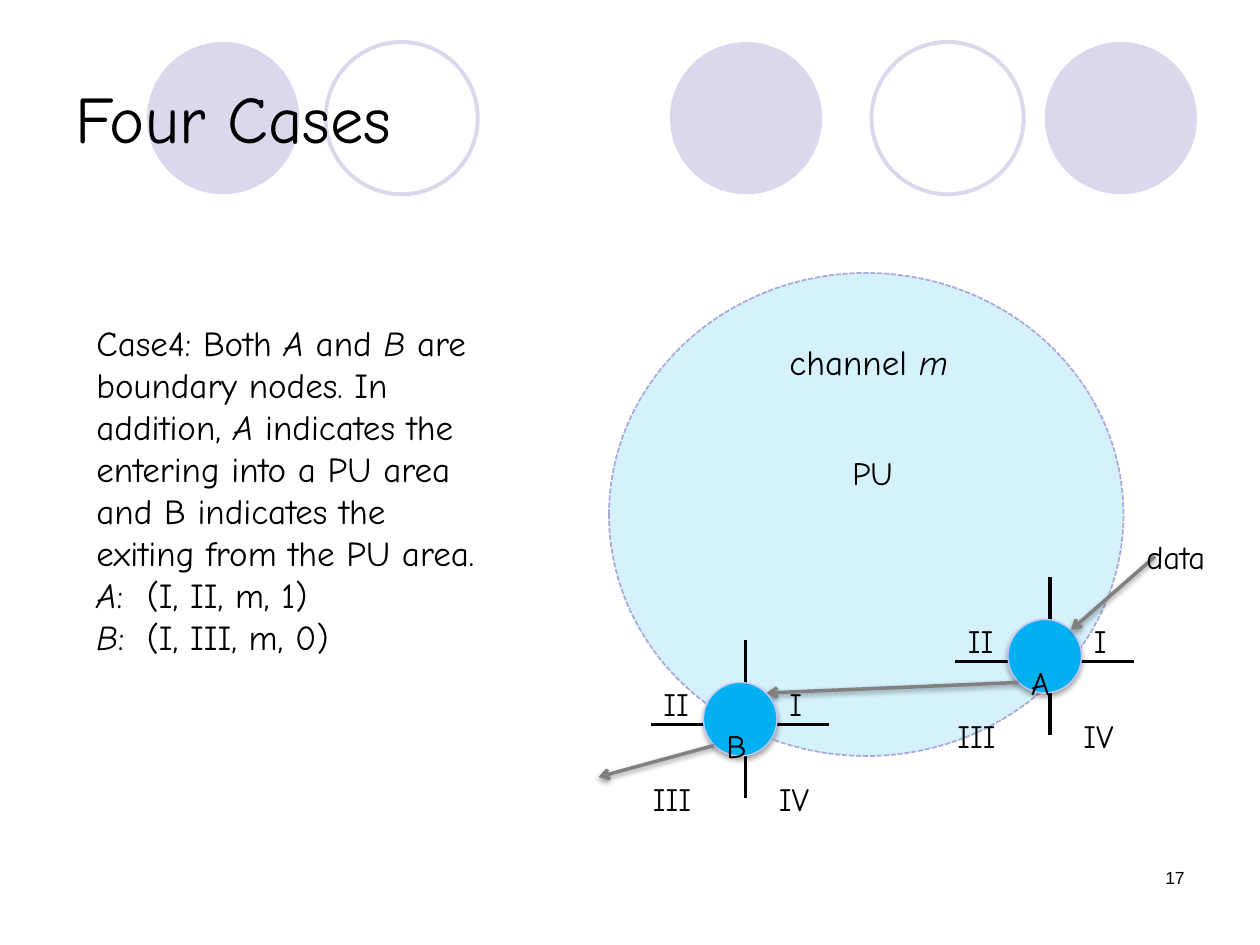
from lxml.etree import SubElement
from pptx import Presentation
from pptx.dml.color import RGBColor
from pptx.enum.dml import MSO_LINE
from pptx.enum.shapes import MSO_CONNECTOR, MSO_SHAPE
from pptx.enum.text import MSO_ANCHOR, PP_ALIGN
from pptx.oxml.ns import qn
from pptx.util import Inches, Pt

COLUMNS, ROWS = 120, 90
SLIDE_WIDTH, SLIDE_HEIGHT = Inches(10), Inches(7.5)
FONT = "Comic Neue"
LILAC, SKY, BLACK, GRAY = "D9D8EC", "00B0F0", "000000", "808080"


def color(value):
    """Turn a hex string into a colour."""
    return RGBColor.from_string(value)


def place(column, row):
    """Turn grid units into lengths on the slide."""
    return int(SLIDE_WIDTH * column / COLUMNS), int(SLIDE_HEIGHT * row / ROWS)


def add_shadow(effects, distance, opacity):
    """Put a soft downward shadow into an effect list."""
    shadow = SubElement(effects, qn("a:outerShdw"), blurRad="40000",
                        dist=str(distance), dir="5400000", rotWithShape="0")
    shade = SubElement(shadow, qn("a:srgbClr"), val=BLACK)
    SubElement(shade, qn("a:alpha"), val=str(opacity * 1000))


def add_text(slide, box, paragraphs, size=20, font=FONT, lowered=False,
             align=PP_ALIGN.LEFT, anchor=MSO_ANCHOR.TOP):
    """Add paragraphs, each a list of runs in which odd ones are italic."""
    left, top, width, height = box
    shape = slide.shapes.add_textbox(*place(left, top), *place(width, height))
    frame = shape.text_frame
    frame.word_wrap = True
    frame.vertical_anchor = anchor
    for index, pieces in enumerate(paragraphs):
        paragraph = frame.add_paragraph() if index else frame.paragraphs[0]
        paragraph.alignment = align
        paragraph.font.size = Pt(size)
        paragraph.font.name = font
        paragraph.font.color.rgb = color(BLACK)
        for position, piece in enumerate(pieces):
            if not piece:
                continue
            run = paragraph.add_run()
            run.text = piece
            if position % 2:
                run.font.italic = True
            if lowered:
                run._r.get_or_add_rPr().set("baseline", "-25000")
    return shape


def add_label(slide, box, text):
    """Add a lowered diagram label."""
    return add_text(slide, box, [[text]], size=32, lowered=True)


def add_circle(slide, box, fill=None, line=None, weight=1):
    """Add an ellipse with an optional fill and outline."""
    left, top, width, height = box
    shape = slide.shapes.add_shape(
        MSO_SHAPE.OVAL, *place(left, top), *place(width, height))
    shape.shadow.inherit = False
    if fill:
        shape.fill.solid()
        shape.fill.fore_color.rgb = color(fill)
    else:
        shape.fill.background()
    if line:
        shape.line.color.rgb = color(line)
        shape.line.width = Pt(weight)
    else:
        shape.line.fill.background()
    return shape


def add_line(slide, start, end, line=BLACK, weight=2.25, arrow=False):
    """Add a plain line or a shadowed arrow between two grid points."""
    connector = slide.shapes.add_connector(
        MSO_CONNECTOR.STRAIGHT, *place(*start), *place(*end))
    connector.line.color.rgb = color(line)
    connector.line.width = Pt(weight)
    properties = connector._element.spPr
    effects = SubElement(properties, qn("a:effectLst"))
    if arrow:
        SubElement(properties.find(qn("a:ln")), qn("a:tailEnd"), type="arrow")
        add_shadow(effects, 20000, 38)
    return connector


def add_arrow(slide, start, end):
    """Add a gray data arrow."""
    return add_line(slide, start, end, GRAY, 2, arrow=True)


def add_header(slide, box):
    """Place the row of circles and the title over it."""
    left, top, width, height = box
    diameter = 14.5
    for offset, filled in ((8, True), (25, False), (57.8, True),
                           (77, False), (93.5, True)):
        circle = (left + offset, top + 0.4, diameter, diameter)
        add_circle(slide, circle, LILAC if filled else None,
                   None if filled else LILAC, 2.25)
    add_text(slide, box, [["Four Cases"]], size=38, anchor=MSO_ANCHOR.MIDDLE)


def add_case(slide, box):
    """Place the case description with its two tuples."""
    shape = add_text(slide, box, [
        ["Case4: Both ", "A", " and ", "B",
         " are boundary nodes. In addition, ", "A",
         " indicates the entering into a PU area and B indicates "
         "the exiting from the PU area."],
        ["", "A", ":\t(I, II, m, 1)"],
        ["", "B", ":\t(I, III, m, 0)"],
    ])
    for paragraph in shape.text_frame.paragraphs[1:]:
        properties = paragraph._p.get_or_add_pPr()
        stops = properties.makeelement(qn("a:tabLst"))
        SubElement(stops, qn("a:tab"), pos=str(Inches(0.4)), algn="l")
        properties.insert(0, stops)


def add_area(slide, box):
    """Place the translucent channel area and its labels."""
    left, top, width, height = box
    area = add_circle(slide, box, SKY, "A9A9DA")
    area.line.dash_style = MSO_LINE.SQUARE_DOT
    fill = area._element.spPr.find(qn("a:solidFill"))
    SubElement(fill.find(qn("a:srgbClr")), qn("a:alpha"), val="17000")
    add_label(slide, (left + 22, top + 13, 9, 7), "PU")
    add_text(slide, (left + 16, top + 5.8, 22, 7), [["channel ", "m"]])


def add_node(slide, box, name):
    """Place a node with its axes and four quadrant labels."""
    left, top, width, height = box
    add_line(slide, (left - 5, top + 4), (left + 12, top + 4))
    add_line(slide, (left + 4, top + 11), (left + 4, top - 4))
    node = add_circle(slide, box, SKY, "C6C6FB", 0.75)
    add_shadow(node._element.spPr.find(qn("a:effectLst")), 23000, 35)
    for text, across, down, columns in (
            (name, 1, 0, 5), ("I", 7, -4, 5), ("II", -5, -4, 10),
            ("III", -6, 5, 10), ("IV", 6, 5, 8)):
        add_label(slide, (left + across, top + down, columns, 5), text)


def add_diagram(slide, box):
    """Place the area, both nodes and the data path."""
    left, top, width, height = box
    add_area(slide, box)
    add_node(slide, (left + 38, top + 33, 7, 7), "A")
    add_arrow(slide, (left + 52, top + 27), (left + 44, top + 34))
    add_arrow(slide, (left + 39, top + 39), (left + 15, top + 40))
    add_label(slide, (left + 50, top + 21, 12, 5), "data")
    add_node(slide, (left + 9, top + 39, 7, 7), "B")
    add_arrow(slide, (left + 10, top + 45), (left - 1, top + 48))


def main():
    """Build and save the slide."""
    presentation = Presentation()
    presentation.slide_width = SLIDE_WIDTH
    presentation.slide_height = SLIDE_HEIGHT
    slide = presentation.slides.add_slide(presentation.slide_layouts[6])
    add_header(slide, (6, 3.6, 108, 15))
    add_text(slide, (86, 82, 28, 6), [["17"]], size=10, font="Arial",
             align=PP_ALIGN.RIGHT)
    add_case(slide, (8, 30, 40, 38))
    add_diagram(slide, (58, 26, 49, 46))
    presentation.save("out.pptx")


if __name__ == "__main__":
    main()
